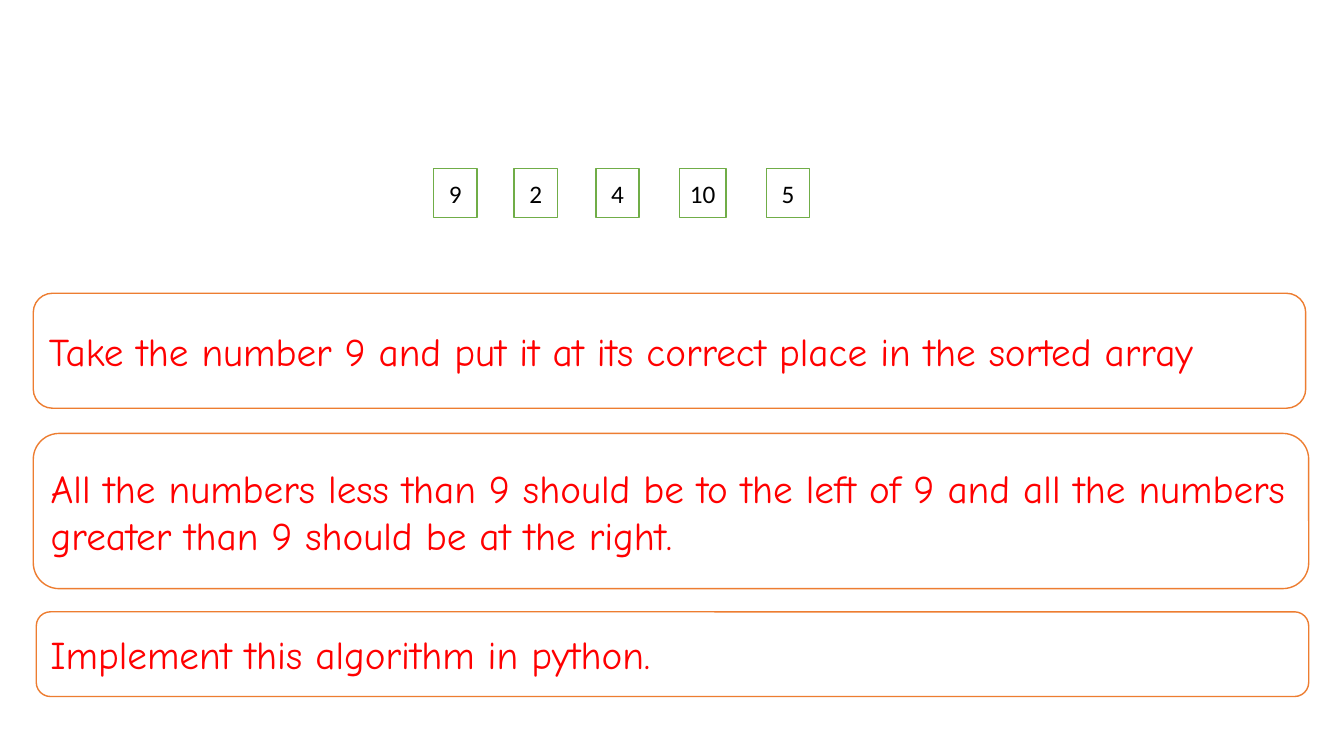
from pptx import Presentation
from pptx.dml.color import RGBColor
from pptx.enum.shapes import MSO_SHAPE
from pptx.enum.text import MSO_ANCHOR, PP_ALIGN
from pptx.util import Inches, Pt

WHITE = RGBColor(0xFF, 0xFF, 0xFF)
BLACK = RGBColor(0x00, 0x00, 0x00)
RED = RGBColor(0xFF, 0x00, 0x00)
GREEN = RGBColor(0x70, 0xAD, 0x47)
ORANGE = RGBColor(0xED, 0x7D, 0x31)

# Each number with its offset from the left of the array and its cell width
ARRAY = [("9", 0, 0.43), ("2", 0.8, 0.43), ("4", 1.61, 0.43),
         ("10", 2.44, 0.46), ("5", 3.3, 0.43)]

# Each step with its left, top, width and height
STEPS = [
    ("Take the number 9 and put it at its correct place in the sorted array",
     0.33, 2.91, 12.62, 1.14),
    ("All the numbers less than 9 should be to the left of 9 and all the "
     "numbers greater than 9 should be at the right.",
     0.33, 4.3, 12.65, 1.54),
    ("Implement this algorithm in python.", 0.36, 6.07, 12.62, 0.84),
]


def add_outlined_box(slide, kind, left, top, width, height, line_color):
    """Add a white box with a thin outline and vertically centred text."""
    shape = slide.shapes.add_shape(
        kind, Inches(left), Inches(top), Inches(width), Inches(height))
    shape.shadow.inherit = False
    shape.fill.solid()
    shape.fill.fore_color.rgb = WHITE
    shape.line.color.rgb = line_color
    shape.line.width = Pt(1)
    shape.text_frame.vertical_anchor = MSO_ANCHOR.MIDDLE
    return shape


def set_text(shape, text, font_name, size, color, alignment):
    shape.text_frame.text = text
    paragraph = shape.text_frame.paragraphs[0]
    paragraph.alignment = alignment
    font = paragraph.runs[0].font
    font.name = font_name
    font.size = Pt(size)
    font.color.rgb = color


def add_array(slide, left, top, height):
    """Place the row of number cells."""
    for number, offset, width in ARRAY:
        cell = add_outlined_box(slide, MSO_SHAPE.RECTANGLE,
                                left + offset, top, width, height, GREEN)
        cell.text_frame.word_wrap = False
        set_text(cell, number, "Calibri", 18, BLACK, PP_ALIGN.CENTER)


def add_step(slide, text, left, top, width, height):
    """Place one rounded instruction box."""
    step = add_outlined_box(slide, MSO_SHAPE.ROUNDED_RECTANGLE,
                            left, top, width, height, ORANGE)
    step.text_frame.word_wrap = True
    set_text(step, text, "Comic Neue", 28, RED, PP_ALIGN.LEFT)


def main():
    presentation = Presentation()
    presentation.slide_width = Inches(13.33)
    presentation.slide_height = Inches(7.5)
    # Blank layout, as the slide has no title
    slide = presentation.slides.add_slide(presentation.slide_layouts[6])

    add_array(slide, left=4.3, top=1.67, height=0.49)
    for step in STEPS:
        add_step(slide, *step)

    presentation.save("out.pptx")


if __name__ == "__main__":
    main()
